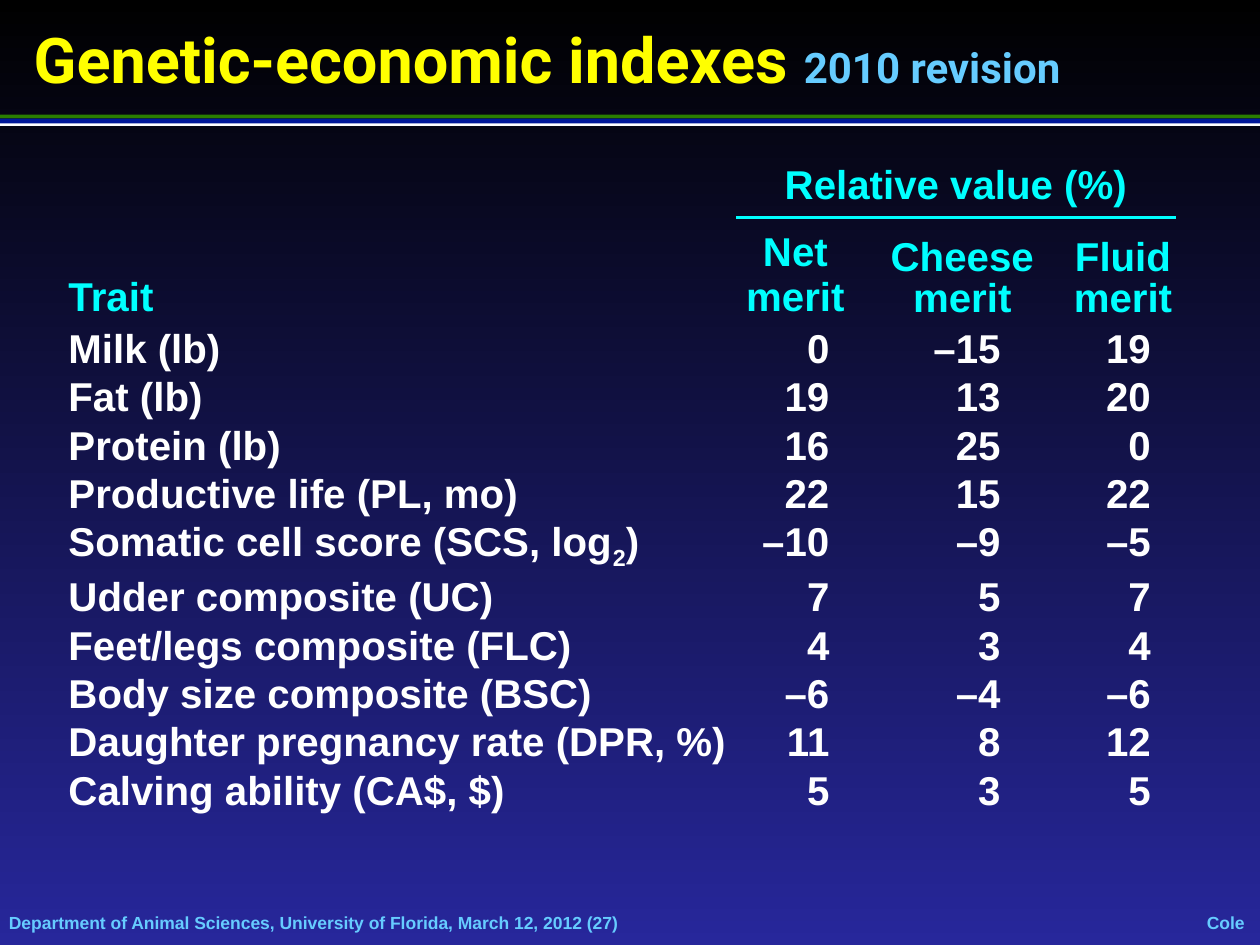
from lxml import etree
from pptx import Presentation
from pptx.dml.color import RGBColor
from pptx.enum.shapes import MSO_SHAPE
from pptx.enum.text import MSO_ANCHOR, PP_ALIGN
from pptx.oxml.ns import qn
from pptx.util import Cm, Pt

# Content
TITLE = [("Genetic-economic indexes ", {"size": 36, "color": "yellow"}),
         ("2010 revision", {"size": 24, "color": "sky"})]
FOOTER = "Department of Animal Sciences, University of Florida, March 12, 2012 (27)"
AUTHOR = "Cole"
GROUP_HEADING = "Relative value (%)"
TRAIT_HEADING = "Trait"
# Each heading: paragraphs, line spacing
MERIT_HEADINGS = [(["Net merit"], 1.0), (["Cheese", "merit"], 0.9), (["Fluid merit"], 0.9)]
SUBSCRIPT_LABEL = [("Somatic cell score (SCS, log", {}), ("2", {"baseline": -25000}), (")", {})]
TRAITS = [
    ("Milk (lb)", "0", "–15", "19"),
    ("Fat (lb)", "19", "13", "20"),
    ("Protein (lb)", "16", "25", "0"),
    ("Productive life (PL, mo)", "22", "15", "22"),
    (SUBSCRIPT_LABEL, "–10", "–9", "–5"),
    ("Udder composite (UC)", "7", "5", "7"),
    ("Feet/legs composite (FLC)", "4", "3", "4"),
    ("Body size composite (BSC)", "–6", "–4", "–6"),
    ("Daughter pregnancy rate (DPR, %)", "11", "8", "12"),
    ("Calving ability (CA$, $)", "5", "3", "5"),
]

# Format
COLORS = {"black": "000000", "indigo": "27279B", "yellow": "FFFF00", "sky": "66CCFF",
          "cyan": "00FFFF", "white": "FFFFFF", "green": "2A7E00", "blue": "001799"}
COLUMN_WIDTHS = [13.46, 2.39, 4.34, 2.14]
RIGHT_INSETS = [0, 0.51, 1.4, 0.51]
HEADING_HEIGHTS = [1.05, 2.2]
ROW_HEIGHT, SUBSCRIPT_ROW_HEIGHT = 0.97, 1.11
HEADING_INSET = 0.13
STRIPES = [("green", 2.31, 0.08), ("white", 2.46, 0.08), ("blue", 2.39, 0.1)]
NO_GRID_STYLE = "{2D5ABB26-0587-4C30-8999-92F81FD0307C}"


def rgb(name):
    return RGBColor.from_string(COLORS[name])


def write(frame, paragraphs, *, size=23, color="white", font="Arial",
          align=PP_ALIGN.LEFT, line_spacing=1.0):
    """Fill a text frame; a paragraph is a string or a list of (text, format) runs."""
    for index, content in enumerate(paragraphs):
        paragraph = frame.paragraphs[0] if index == 0 else frame.add_paragraph()
        paragraph.alignment = align
        paragraph.line_spacing = line_spacing
        runs = [(content, {})] if isinstance(content, str) else content
        for text, style in runs:
            run = paragraph.add_run()
            run.text = text
            run.font.name = font
            run.font.bold = True
            run.font.size = Pt(style.get("size", size))
            run.font.color.rgb = rgb(style.get("color", color))
            if "baseline" in style:
                run.font._element.set("baseline", str(style["baseline"]))


def add_text(slide, box, paragraphs, *, insets=(0, 0), **style):
    frame = slide.shapes.add_textbox(*map(Cm, box)).text_frame
    frame.word_wrap = True
    frame.vertical_anchor = MSO_ANCHOR.MIDDLE
    frame.margin_left = frame.margin_right = Cm(insets[0])
    frame.margin_top = frame.margin_bottom = Cm(insets[1])
    write(frame, paragraphs, **style)


def fill_cell(cell, paragraphs, *, top=0, right=0, bottom=0, anchor=MSO_ANCHOR.TOP, **style):
    cell.margin_left, cell.margin_right = 0, Cm(right)
    cell.margin_top, cell.margin_bottom = Cm(top), Cm(bottom)
    cell.vertical_anchor = anchor
    write(cell.text_frame, paragraphs, **style)


def set_borders(cell, top=None, bottom=None, width=1.5):
    """Give the top and bottom edges a colour; an edge without one has no line."""
    properties = cell._tc.get_or_add_tcPr()
    for index, (side, color) in enumerate((("T", top), ("B", bottom))):
        line = etree.Element(qn(f"a:ln{side}"), w=str(Pt(width) if color else 0))
        if color:
            solid = etree.SubElement(line, qn("a:solidFill"))
            etree.SubElement(solid, qn("a:srgbClr"), val=COLORS[color])
        else:
            etree.SubElement(line, qn("a:noFill"))
        properties.insert(index, line)


def add_trait_table(slide):
    heights = HEADING_HEIGHTS + [
        SUBSCRIPT_ROW_HEIGHT if row[0] is SUBSCRIPT_LABEL else ROW_HEIGHT for row in TRAITS]
    frame = slide.shapes.add_table(len(heights), len(COLUMN_WIDTHS), Cm(1.38), Cm(3.28),
                                   Cm(sum(COLUMN_WIDTHS)), Cm(sum(heights)))
    table = frame.table
    table.first_row = table.horz_banding = False
    table._tbl.tblPr.find(qn("a:tableStyleId")).text = NO_GRID_STYLE
    for column, width in zip(table.columns, COLUMN_WIDTHS):
        column.width = Cm(width)
    for row, height in zip(table.rows, heights):
        row.height = Cm(height)

    # One rule, between the group heading and the merit headings
    for row in range(len(heights)):
        for column in range(len(COLUMN_WIDTHS)):
            cell = table.cell(row, column)
            cell.fill.background()
            set_borders(cell, top="cyan" if column and row == 1 else None,
                        bottom="cyan" if column and row == 0 else None)

    # Headings
    table.cell(0, 0).merge(table.cell(1, 0))
    table.cell(0, 1).merge(table.cell(0, 3))
    heading = {"color": "cyan", "bottom": HEADING_INSET}
    fill_cell(table.cell(0, 0), [TRAIT_HEADING], anchor=MSO_ANCHOR.BOTTOM, **heading)
    fill_cell(table.cell(0, 1), [GROUP_HEADING], align=PP_ALIGN.CENTER, **heading)
    for column, (lines, spacing) in enumerate(MERIT_HEADINGS, start=1):
        fill_cell(table.cell(1, column), lines, top=HEADING_INSET, anchor=MSO_ANCHOR.BOTTOM,
                  align=PP_ALIGN.CENTER, line_spacing=spacing, **heading)

    # Traits and their values
    for row, values in enumerate(TRAITS, start=len(HEADING_HEIGHTS)):
        for column, value in enumerate(values):
            fill_cell(table.cell(row, column), [value], right=RIGHT_INSETS[column],
                      align=PP_ALIGN.RIGHT if column else PP_ALIGN.LEFT)


def main():
    presentation = Presentation()
    presentation.slide_width, presentation.slide_height = Cm(25.4), Cm(19.05)
    slide = presentation.slides.add_slide(presentation.slide_layouts[6])

    # Background, dark at the top
    background = slide.background.fill
    background.gradient()
    background.gradient_angle = 270
    for stop, position, color in zip(background.gradient_stops, (0, 1), ("black", "indigo")):
        stop.position = position
        stop.color.rgb = rgb(color)

    # Footer
    add_text(slide, (0.18, 18.39, 20.55, 0.43), [FOOTER], size=10, color="sky")
    add_text(slide, (24.26, 18.39, 0.9, 0.43), [AUTHOR], size=10, color="sky",
             align=PP_ALIGN.CENTER)

    # Stripes under the title
    for color, top, height in STRIPES:
        stripe = slide.shapes.add_shape(MSO_SHAPE.RECTANGLE, 0, Cm(top),
                                        presentation.slide_width, Cm(height))
        stripe.shadow.inherit = False
        stripe.fill.solid()
        stripe.fill.fore_color.rgb = rgb(color)
        stripe.line.fill.background()

    add_trait_table(slide)

    # Title
    add_text(slide, (0.43, 0.28, 24.54, 1.78), [TITLE], font="Roboto", insets=(0.25, 0.13))

    presentation.save("out.pptx")


if __name__ == "__main__":
    main()
